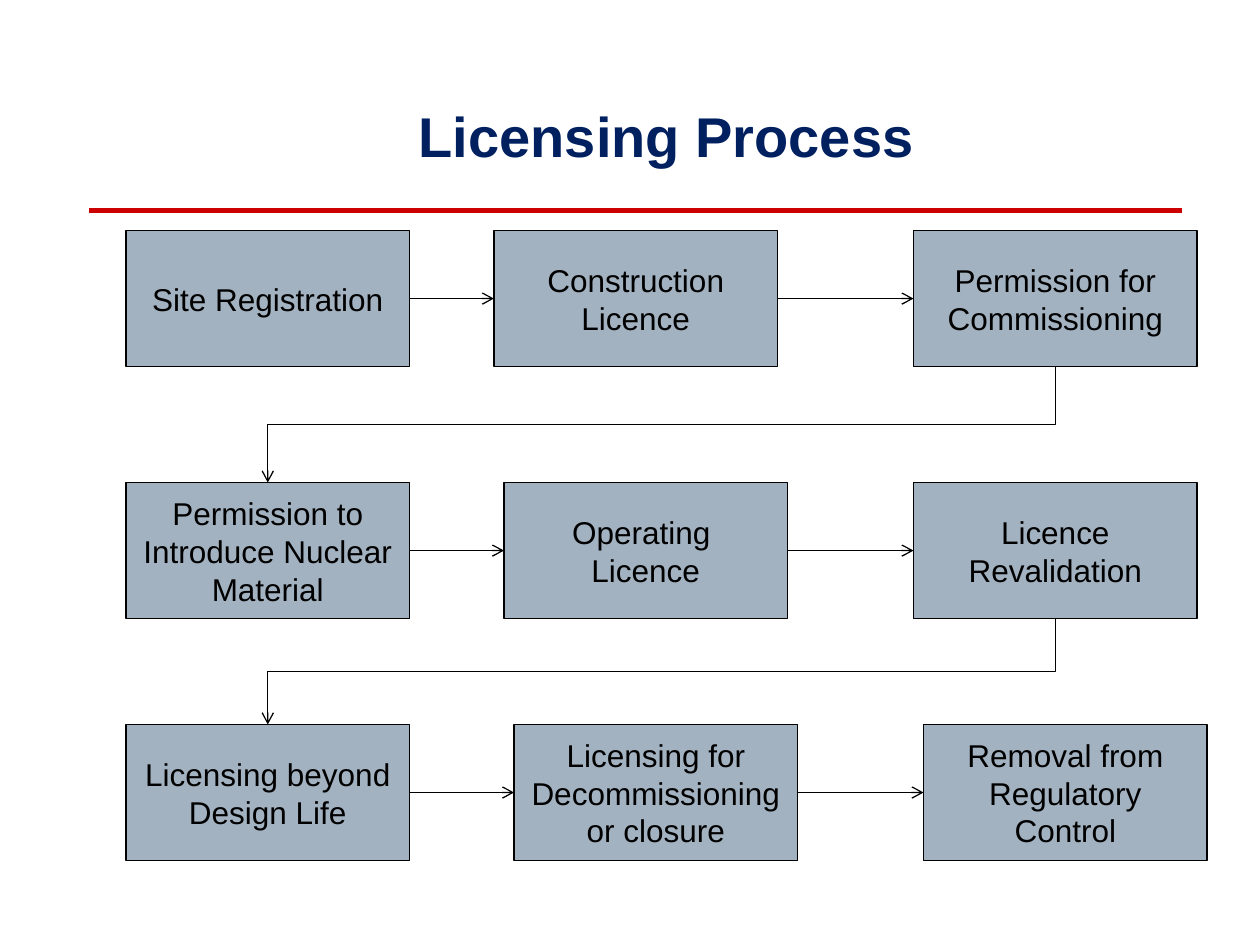
import pptx
import pptx.util
import pptx.dml.color
import pptx.enum.shapes
import pptx.enum.text
import pptx.oxml
import pptx.oxml.ns
import lxml.etree

Inches = pptx.util.Inches
Pt = pptx.util.Pt
Connector = pptx.enum.shapes.MSO_CONNECTOR
Anchor = pptx.enum.text.MSO_ANCHOR

COLOURS = {
    "title": "002060",
    "rule": "CC0000",
    "box": "A3B2C1",
    "ink": "000000",
}
TITLE_FORMAT = {"name": "Arial", "size": Pt(32), "bold": True}
BOX_FORMAT = {"name": "Arial", "size": Pt(18), "bold": False}
BOX_WIDTH, BOX_HEIGHT = 2.25, 1.08

ROWS = [
    (1.83, [
        (1, "Site Registration"),
        (3.92, "Construction Licence"),
        (7.25, "Permission for Commissioning"),
    ]),
    (3.83, [
        (1, "Permission to Introduce Nuclear Material"),
        (4, "Operating \nLicence"),
        (7.25, "Licence Revalidation"),
    ]),
    (5.75, [
        (1, "Licensing beyond Design Life"),
        (4.08, "Licensing for Decommissioning or closure"),
        (7.33, "Removal from Regulatory Control"),
    ]),
]


class SlideBuilder:
    def __init__(self, slide, colours):
        self.slide = slide
        self.colours = colours

    def colour(self, name):
        return pptx.dml.color.RGBColor.from_string(self.colours[name])

    def set_text(self, shape, text, text_format, colour, anchor):
        frame = shape.text_frame
        frame.word_wrap = True
        frame.vertical_anchor = anchor
        frame.text = text
        for paragraph in frame.paragraphs:
            paragraph.alignment = pptx.enum.text.PP_ALIGN.CENTER
            for run in paragraph.runs:
                for attribute, value in text_format.items():
                    setattr(run.font, attribute, value)
                run.font.color.rgb = self.colour(colour)

    def title(self, text, left, top, width, height):
        shape = self.slide.shapes.add_textbox(
            Inches(left), Inches(top), Inches(width), Inches(height))
        self.set_text(shape, text, TITLE_FORMAT, "title", Anchor.BOTTOM)

    def box(self, text, left, top):
        shape = self.slide.shapes.add_shape(
            pptx.enum.shapes.MSO_SHAPE.RECTANGLE,
            Inches(left), Inches(top), Inches(BOX_WIDTH), Inches(BOX_HEIGHT))
        shape.shadow.inherit = False
        shape.fill.solid()
        shape.fill.fore_color.rgb = self.colour("box")
        shape.line.color.rgb = self.colour("ink")
        shape.line.width = Pt(0.75)
        self.set_text(shape, text, BOX_FORMAT, "ink", Anchor.MIDDLE)
        return shape

    def line(self, kind, start, end, colour="ink", width=0.75):
        connector = self.slide.shapes.add_connector(kind, *start, *end)
        connector.line.color.rgb = self.colour(colour)
        connector.line.width = Pt(width)
        lxml.etree.SubElement(
            connector._element.spPr, pptx.oxml.ns.qn("a:effectLst"))
        return connector

    def arrowhead(self, connector):
        lxml.etree.SubElement(
            connector.line._get_or_add_ln(),
            pptx.oxml.ns.qn("a:tailEnd"), type="arrow")

    def arrow(self, source, target):
        connector = self.line(Connector.STRAIGHT, (0, 0), (0, 0))
        connector.begin_connect(source, 3)
        connector.end_connect(target, 1)
        self.arrowhead(connector)

    def row_return(self, source, target):
        start_x = source.left + source.width // 2
        start_y = source.top + source.height
        end_x = target.left + target.width // 2
        drop, span = target.top - start_y, start_x - end_x
        left = (start_x + end_x - drop) // 2
        top = (start_y + target.top - span) // 2
        connector = self.line(
            Connector.ELBOW, (left, top), (left + drop, top + span))
        connector._element.spPr.xfrm.set("rot", "5400000")
        self.arrowhead(connector)


def main():
    presentation = pptx.Presentation()
    presentation.slide_width = Inches(10)
    presentation.slide_height = Inches(7.5)
    slide = presentation.slides.add_slide(presentation.slide_layouts[6])
    builder = SlideBuilder(slide, COLOURS)

    builder.line(Connector.STRAIGHT, (Inches(0.71), Inches(1.67)),
                 (Inches(9.38), Inches(1.67)), "rule", 3)
    builder.title("Licensing Process", 1.25, 0.75, 8.08, 0.64)

    rows = [[builder.box(text, left, top) for left, text in steps]
            for top, steps in ROWS]
    for row in rows:
        for source, target in zip(row, row[1:]):
            builder.arrow(source, target)
    for upper, lower in zip(rows, rows[1:]):
        builder.row_return(upper[-1], lower[0])

    presentation.save("out.pptx")


if __name__ == "__main__":
    main()
